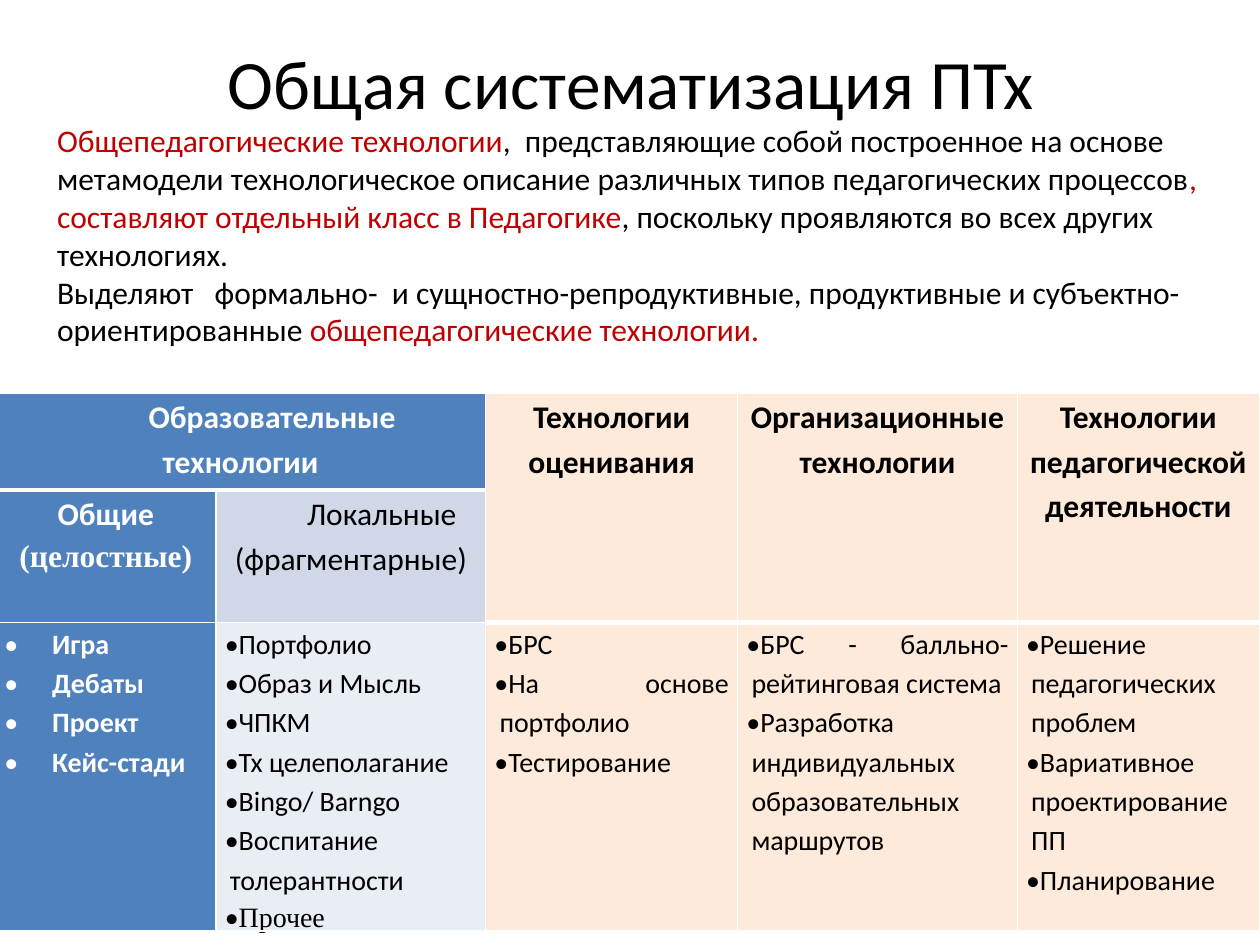
from pptx import Presentation, util as u
from pptx.dml.color import RGBColor
from pptx.enum import text
from pptx.oxml.ns import qn
from lxml import etree

SANS, SERIF = "Calibri", "Times New Roman"
BLACK, WHITE, RED = "000000", "FFFFFF", "C00000"
BLUE, PALE, MIST, PEACH = "4F81BD", "D0D8E8", "E9EDF4", "FDEADA"
MID, JUST = text.PP_ALIGN.CENTER, text.PP_ALIGN.JUSTIFY


def hue(code):
    return RGBColor.from_string(code)


class Deck:
    """Hold the style and current slide, laid on a grid of 100 columns by 75 rows."""

    def __init__(self):
        self.prs = Presentation()
        self.prs.slide_width, self.prs.slide_height = u.Inches(10), u.Inches(7.5)
        self.slide = self.prs.slides.add_slide(self.prs.slide_layouts[6])

    def unit(self, count):
        return int(self.prs.slide_width * count / 100)

    def run(self, para, words, size, color=BLACK, bold=False, font=SANS):
        run = para.add_run()
        run.text = words
        run.font.size, run.font.bold, run.font.name = u.Pt(size), bold, font
        run.font.color.rgb = hue(color)

    def box(self, place, paras, size, align=None, anchor=text.MSO_ANCHOR.TOP):
        frame = self.slide.shapes.add_textbox(*map(self.unit, place)).text_frame
        frame.word_wrap, frame.vertical_anchor = True, anchor
        for i, runs in enumerate(paras):
            para = frame.add_paragraph() if i else frame.paragraphs[0]
            para.alignment = align
            for words, color in runs:
                self.run(para, words, size, color)

    def table(self, left, top, cols, rows):
        place = [self.unit(n) for n in (left, top, sum(cols), sum(rows))]
        grid = self.slide.shapes.add_table(len(rows), len(cols), *place).table
        for col, wide in zip(grid.columns, cols):
            col.width = self.unit(wide)
        for row, high in zip(grid.rows, rows):
            row.height = self.unit(high)
        return grid

    def edge(self, cell, fill, base=1):
        props = cell._tc.get_or_add_tcPr()
        for side, wide in zip("LRTB", (1, 1, 1, base)):
            line = etree.SubElement(props, qn(f"a:ln{side}"), w=str(u.Pt(wide)))
            paint = etree.SubElement(line, qn("a:solidFill"))
            etree.SubElement(paint, qn("a:srgbClr"), val=WHITE)
        cell.fill.solid()
        cell.fill.fore_color.rgb = hue(fill)
        cell.margin_left = cell.margin_right = self.unit(0.7)
        cell.margin_top = cell.margin_bottom = 0

    def fill(self, cell, items, size, align, color=BLACK, bold=False,
             left=0, first=0, dot=False):
        for i, (words, font) in enumerate(items):
            para = cell.text_frame.add_paragraph() if i else cell.text_frame.paragraphs[0]
            para.alignment, para.line_spacing = align, 1.15
            props = para._p.get_or_add_pPr()
            props.set("marL", str(self.unit(left)))
            props.set("indent", str(self.unit(first)))
            if dot:
                etree.SubElement(props, qn("a:buFont"), typeface=SANS)
                etree.SubElement(props, qn("a:buChar"), char="•")
            self.run(para, words, size, color, bold, font)


def main():
    deck = Deck()
    deck.box((5.05, 3, 90, 6.9), [[("Общая систематизация ПТх", BLACK)]], 39.6,
             MID, text.MSO_ANCHOR.MIDDLE)

    grid = deck.table(-0.35, 31.2, (17.5, 21.4, 20, 22.2, 19.2), (7.7, 10.5, 23.7))
    fills = ([BLUE, BLUE] + [PEACH] * 3, [BLUE, PALE] + [PEACH] * 3,
             [BLUE, MIST] + [PEACH] * 3)
    for r, row in enumerate(fills):
        for c, color in enumerate(row):
            deck.edge(grid.cell(r, c), color, 3 if r == 0 or (r == 1 and c > 1) else 1)

    grid.cell(0, 0).merge(grid.cell(0, 1))
    deck.fill(grid.cell(0, 0), [("Образовательные технологии", SANS)], 18, MID,
              WHITE, True, first=5)
    heads = ("Технологии оценивания", "Организационные технологии",
             "Технологии педагогической деятельности")
    for c, head in enumerate(heads, 2):
        grid.cell(0, c).merge(grid.cell(1, c))
        deck.fill(grid.cell(0, c), [(head, SANS)], 18, MID, bold=True)
    deck.fill(grid.cell(1, 0), [("Общие", SANS), ("(целостные)", SERIF)], 18, MID,
              WHITE, True)
    deck.fill(grid.cell(1, 1), [("Локальные (фрагментарные)", SANS)], 18, MID, first=4.9)

    lists = (
        ("Игра", "Дебаты", "Проект", "Кейс-стади"),
        ("Портфолио", "Образ и Мысль", "ЧПКМ ", "Тх целеполагание",
         "Bingo/ Barngo ", "Воспитание толерантности", "Прочее "),
        ("БРС", "На основе портфолио", "Тестирование"),
        ("БРС - балльно-рейтинговая система",
         "Разработка индивидуальных образовательных маршрутов"),
        ("Решение педагогических  проблем ", "Вариативное проектирование ПП ",
         "Планирование"),
    )
    for c, names in enumerate(lists):
        look = (dict(color=WHITE, bold=True, left=3.8, first=-3.8) if c == 0
                else dict(left=0.4, first=-1.6))
        items = [(name, SERIF if name == "Прочее " else SANS) for name in names]
        deck.fill(grid.cell(2, c), items, 16, JUST, dot=True, **look)

    deck.box((3.55, 9.15, 95.3, 19.2), [
        [("Общепедагогические технологии", RED),
         (",  представляющие собой построенное на основе метамодели технологическое "
          "описание различных типов педагогических процессов", BLACK),
         (", составляют отдельный класс в Педагогике", RED),
         (", поскольку проявляются во всех других технологиях.", BLACK)],
        [("Выделяют   формально-  и сущностно-репродуктивные, продуктивные и "
          "субъектно-ориентированные ", BLACK),
         ("общепедагогические технологии.", RED)],
    ], 18)
    deck.prs.save("out.pptx")


if __name__ == "__main__":
    main()
